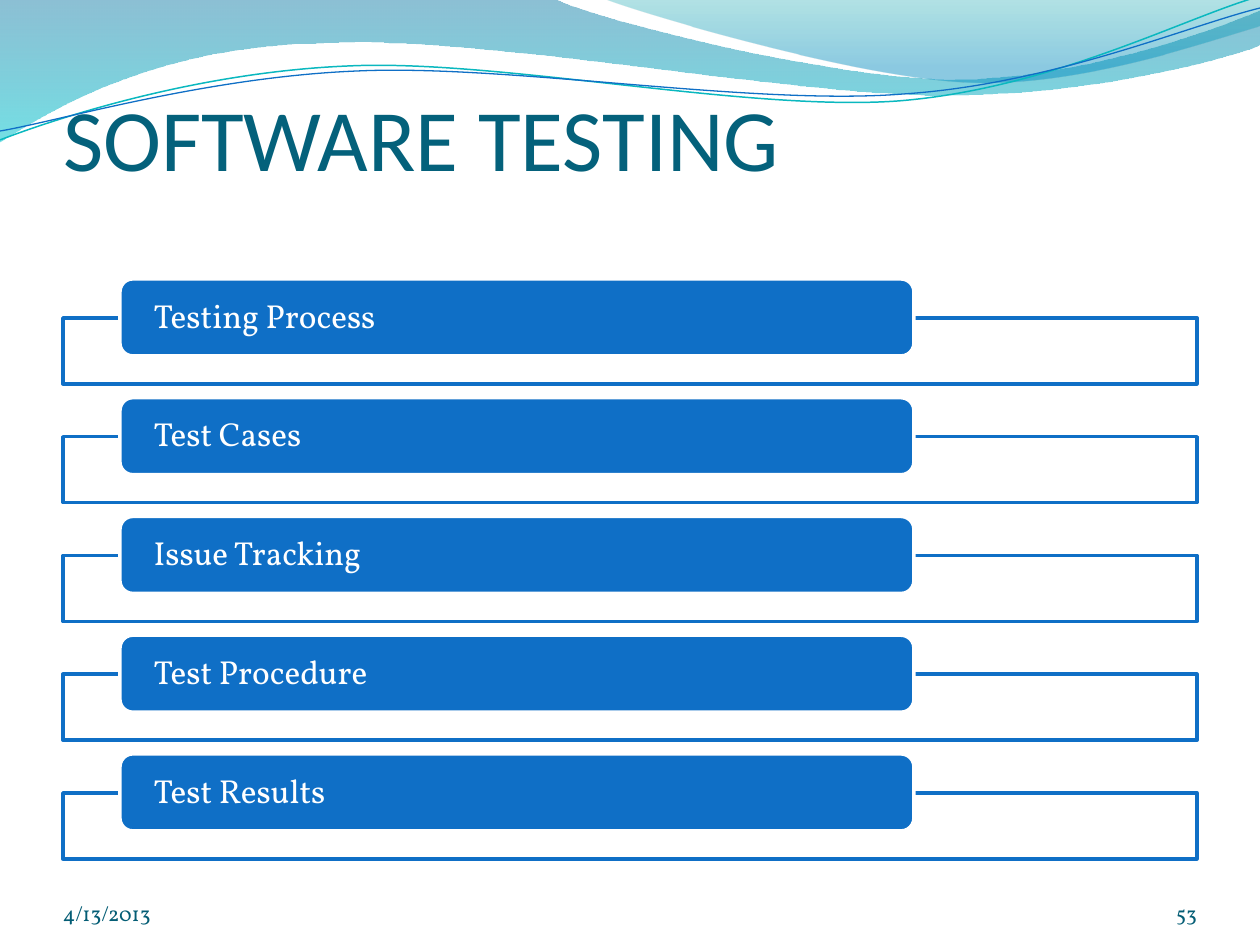
from math import cos, radians, sin

from lxml.etree import SubElement
from pptx import Presentation
from pptx.dml.color import RGBColor
from pptx.enum.shapes import MSO_SHAPE as Shape
from pptx.enum.text import MSO_ANCHOR as Anchor, MSO_AUTO_SIZE as AutoSize, PP_ALIGN as Align
from pptx.oxml.ns import qn
from pptx.util import Pt

TITLE = "SOFTWARE TESTING"
TOPICS = ["Testing Process", "Test Cases", "Issue Tracking", "Test Procedure", "Test Results"]
FOOTERS = [("4/13/2013", 63, 293, Align.LEFT), ("53", 1092, 105, Align.RIGHT)]

THEME = {
    "blue": "0F6FC6", "teal": "0AB8BF", "white": "FFFFFF",
    "title": "04617B", "footer": "045D75",
    "head_font": "Calibri", "body_font": "Vollkorn",
    "title_size": 50, "topic_size": 19, "footer_size": 12,
}

WAVES = [
    ([(0, 0), (554, -1), (600, 21, 837, 79, 955, 79), (1075, 79, 1207, 33, 1260, 11),
      (1261, 45), (1239, 55, 1096, 96, 940, 95), (784, 95, 481, 35, 324, 43),
      (163, 45, 58, 105, -1, 142), (0, 0)],
     [(0, "0074A1", 45), (1, "00C6CF", 55)]),
    ([(604, -1), (641, 14, 859, 78, 969, 82), (1079, 87, 1211, 40, 1260, 26), (1260, 0),
      (604, -1)],
     [(0, "00A1A9", 30), (0.8, "008BBF", 45)]),
]
STROKES = [
    ([(0, 140), (60, 117, 199, 72, 349, 66), (498, 59, 747, 112, 898, 101),
      (1050, 89, 1182, 19, 1257, -3)], (629, 72), "teal", 0.85),
    ([(0, 131), (59, 121, 207, 77, 357, 71), (508, 64, 752, 106, 903, 94),
      (1053, 84, 1187, 26, 1260, 8)], (629, 74), "blue", 0.75),
]

PX = 914400 // 126
TILT = 2.7
ROW_TOP, ROW_PITCH = 318, 118.75


def px(*values):
    return [round(v * PX) for v in values]


def rgb(name):
    return RGBColor.from_string(THEME.get(name, name))


def set_alpha(color_el, percent):
    SubElement(color_el, qn("a:alpha")).set("val", str(percent * 1000))


def tilt(path, center):
    cx, cy = center
    c, k = cos(radians(TILT)), sin(radians(TILT))
    tilted = []
    for seg in path:
        turned = []
        for x, y in zip(seg[::2], seg[1::2]):
            dx, dy = x - cx, y - cy
            turned += [cx + dx * c - dy * k, cy + dx * k + dy * c]
        tilted.append(tuple(turned))
    return tilted


def add_curve(s, path, close):
    points = [px(*seg[-2:]) for seg in path]
    builder = s.shapes.build_freeform(*points[0], scale=1.0)
    builder.add_line_segments(points[1:], close=close)
    sp = builder.convert_to_shape()
    sp.shadow.inherit = False
    for el, seg in zip(list(sp.element.iter(qn("a:lnTo"))), path[1:]):
        if len(seg) == 6:
            curve = SubElement(el.getparent(), qn("a:cubicBezTo"))
            el.getparent().replace(el, curve)
            for x, y in zip(px(*seg[::2]), px(*seg[1::2])):
                pt = SubElement(curve, qn("a:pt"))
                pt.set("x", str(x - sp.left))
                pt.set("y", str(y - sp.top))
    return sp


def add_wave(s, path, stops):
    sp = add_curve(s, path, True)
    sp.line.fill.background()
    sp.fill.gradient()
    sp.fill.gradient_angle = 270
    for stop, (position, color, _) in zip(sp.fill.gradient_stops, stops):
        stop.position = position
        stop.color.rgb = rgb(color)
    for el, (_, _, alpha) in zip(sp.element.iter(qn("a:srgbClr")), stops):
        set_alpha(el, alpha)


def add_stroke(s, path, center, color, width):
    sp = add_curve(s, tilt(path, center), False)
    sp.rotation = 360 - TILT
    sp.fill.background()
    sp.line.color.rgb = rgb(color)
    sp.line.width = Pt(width)


def add_box(s, kind, box, fill, line):
    sp = s.shapes.add_shape(kind, *px(*box))
    sp.shadow.inherit = False
    sp.fill.solid()
    sp.fill.fore_color.rgb = rgb(fill)
    sp.line.color.rgb = rgb(line)
    sp.line.width = Pt(2)
    return sp


def write(sp, text, role, font, color, anchor, insets=(0, 0, 0, 0), align=Align.LEFT):
    tf = sp.text_frame
    tf.word_wrap = True
    tf.auto_size = AutoSize.NONE
    tf.vertical_anchor = anchor
    tf.margin_left, tf.margin_top, tf.margin_right, tf.margin_bottom = px(*insets)
    p = tf.paragraphs[0]
    p.alignment = align
    r = p.add_run()
    r.text = text
    r.font.name = THEME[font]
    r.font.size = Pt(THEME[role])
    r.font.color.rgb = rgb(color)
    return p


def add_topic(s, i, text):
    top = ROW_TOP + ROW_PITCH * i
    frame = add_box(s, Shape.RECTANGLE, (63, top, 1134, 66), "white", "blue")
    set_alpha(next(frame.element.iter(qn("a:srgbClr"))), 90)
    pill = add_box(s, Shape.ROUNDED_RECTANGLE, (120, top - 39, 794, 77), "blue", "white")
    p = write(pill, text, "topic_size", "body_font", "white", Anchor.MIDDLE, (30, 0, 30, 0))
    p.line_spacing = 0.9


def main():
    prs = Presentation()
    prs.slide_width, prs.slide_height = px(1260, 945)
    s = prs.slides.add_slide(prs.slide_layouts[5])

    for wave in WAVES:
        add_wave(s, *wave)
    for stroke in STROKES:
        add_stroke(s, *stroke)

    title = s.shapes.title
    s.shapes.element.append(title.element)
    title.left, title.top, title.width, title.height = px(63, 32, 1134, 157)
    write(title, TITLE, "title_size", "head_font", "title", Anchor.BOTTOM, (0, 6, 0, 0))

    for i, text in enumerate(TOPICS):
        add_topic(s, i, text)
    for text, left, width, align in FOOTERS:
        box = s.shapes.add_textbox(*px(left, 876, width, 50))
        write(box, text, "footer_size", "body_font", "footer", Anchor.BOTTOM, align=align)

    prs.save("out.pptx")


if __name__ == "__main__":
    main()
